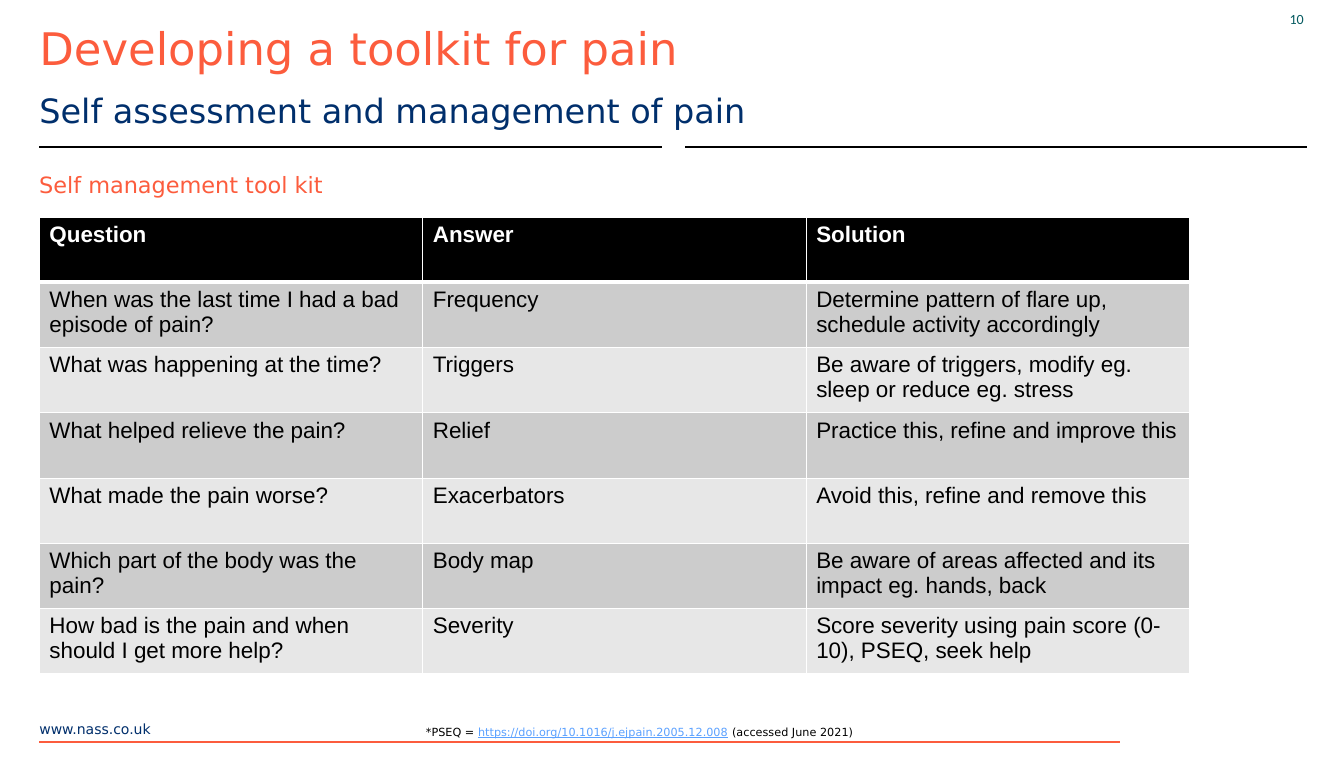
from lxml.etree import SubElement
from pptx import Presentation
from pptx.dml.color import RGBColor
from pptx.enum.shapes import MSO_CONNECTOR
from pptx.enum.text import MSO_ANCHOR, MSO_AUTO_SIZE, PP_ALIGN
from pptx.oxml.ns import qn
from pptx.util import Pt

WHITE = RGBColor(0xFF, 0xFF, 0xFF)
BLACK = RGBColor(0x00, 0x00, 0x00)
CORAL = RGBColor(0xFC, 0x5C, 0x3D)
NAVY = RGBColor(0x00, 0x2F, 0x6C)
TEAL = RGBColor(0x05, 0x5A, 0x60)
LINK_BLUE = RGBColor(0x5B, 0xA1, 0xFF)
DARK_BAND = RGBColor(0xCC, 0xCC, 0xCC)
LIGHT_BAND = RGBColor(0xE7, 0xE7, 0xE7)

MAIN_FONT = "DejaVu Sans"
TABLE_FONT = "Arial"
LEFT = 28.1
ROW_HEIGHT = 46.6
COLUMN_WIDTH = 273.4

TOOLKIT = [
    ("Question", "Answer", "Solution"),
    ("When was the last time I had a bad episode of pain?", "Frequency",
     "Determine pattern of flare up, schedule activity accordingly"),
    ("What was happening at the time?", "Triggers",
     "Be aware of triggers, modify eg. sleep or reduce eg. stress"),
    ("What helped relieve the pain?", "Relief",
     "Practice this, refine and improve this"),
    ("What made the pain worse?", "Exacerbators",
     "Avoid this, refine and remove this"),
    ("Which part of the body was the pain?", "Body map",
     "Be aware of areas affected and its impact eg. hands, back"),
    ("How bad is the pain and when should I get more help?", "Severity",
     "Score severity using pain score (0-10), PSEQ, seek help"),
]


def set_attributes(target, values):
    for name, value in values.items():
        setattr(target, name, value)


def add_span(para, text, size, color, font=MAIN_FONT, **more):
    span = para.add_run()
    span.text = text
    set_attributes(span.font, {"name": font, "size": Pt(size), **more})
    span.font.color.rgb = color


def format_frame(frame, margins, anchor=MSO_ANCHOR.TOP):
    left, top, right, bottom = map(Pt, margins)
    set_attributes(frame, {
        "word_wrap": True, "auto_size": MSO_AUTO_SIZE.NONE,
        "vertical_anchor": anchor, "margin_left": left, "margin_top": top,
        "margin_right": right, "margin_bottom": bottom,
    })


def add_text(page, place, spans, margins=(0, 0, 0, 0),
             anchor=MSO_ANCHOR.TOP, align=PP_ALIGN.LEFT):
    box = page.shapes.add_textbox(*map(Pt, place))
    format_frame(box.text_frame, margins, anchor)
    para = box.text_frame.paragraphs[0]
    para.alignment = align
    for text, format_values in spans:
        add_span(para, text, **format_values)


def add_title(page, text):
    title = page.shapes.title
    set_attributes(title, {"left": Pt(LEFT), "top": Pt(15.8),
                           "width": Pt(901.4), "height": Pt(39.6)})
    title.fill.solid()
    title.fill.fore_color.rgb = WHITE
    format_frame(title.text_frame, (0, 3.6, 0, 3.6))
    para = title.text_frame.paragraphs[0]
    set_attributes(para, {"alignment": PP_ALIGN.LEFT, "line_spacing": 0.9})
    add_span(para, text, 32, CORAL)


def add_rule(page, start, end, y, color, width):
    rule = page.shapes.add_connector(
        MSO_CONNECTOR.STRAIGHT, Pt(start), Pt(y), Pt(end), Pt(y))
    rule.line.color.rgb = color
    rule.line.width = Pt(width)
    SubElement(rule._element.spPr, qn("a:effectLst"))


def add_borders(cell, bottom_widths):
    properties = cell._tc.get_or_add_tcPr()
    widths = {"lnL": 1, "lnR": 1, **bottom_widths}
    for side, width in widths.items():
        border = SubElement(properties, qn(f"a:{side}"), w=str(Pt(width)))
        fill = SubElement(border, qn("a:solidFill"))
        SubElement(fill, qn("a:srgbClr"), val=str(WHITE))


def add_toolkit_table(page, rows):
    columns = len(rows[0])
    table = page.shapes.add_table(
        len(rows), columns, Pt(LEFT), Pt(154.8),
        Pt(COLUMN_WIDTH * columns), Pt(ROW_HEIGHT * len(rows))).table
    for column in table.columns:
        column.width = Pt(COLUMN_WIDTH)
    for index, texts in enumerate(rows):
        table.rows[index].height = Pt(ROW_HEIGHT)
        header = index == 0
        band = BLACK if header else DARK_BAND if index % 2 else LIGHT_BAND
        for cell, text in zip(table.rows[index].cells, texts):
            # The header is set off by a heavier line below it
            add_borders(cell, {"lnT": 3 if index == 1 else 1,
                               "lnB": 3 if header else 1})
            cell.fill.solid()
            cell.fill.fore_color.rgb = band
            add_span(cell.text_frame.paragraphs[0], text, 16,
                     WHITE if header else BLACK, TABLE_FONT, bold=header)


def main():
    deck = Presentation()
    deck.slide_width, deck.slide_height = Pt(958.3), Pt(540)
    page = deck.slides.add_slide(deck.slide_layouts[5])

    # Rules, with a white break in the upper one
    add_rule(page, LEFT, 931.7, 105.1, BLACK, 1.5)
    add_rule(page, 472.3, 488.2, 105.1, WHITE, 4.5)
    add_rule(page, LEFT, 798.5, 529.2, CORAL, 1.5)

    # Headings and page number
    add_title(page, "Developing a toolkit for pain")
    add_text(page, (LEFT, 60.5, 901.4, 32.4),
             [("Self assessment and management of pain",
               {"size": 23.9, "color": NAVY})], (0, 3.6, 7.2, 3.6))
    add_text(page, (20.9, 117.4, 363.6, 28.1),
             [("Self management tool kit", {"size": 16, "color": CORAL})],
             (7.2, 0, 7.2, 0), MSO_ANCHOR.MIDDLE)
    add_text(page, (902.2, -0.4, 27.4, 27.4),
             [("10", {"size": 10, "color": TEAL, "font": "Calibri"})],
             (7.2, 3.6, 0, 3.6), MSO_ANCHOR.MIDDLE, PP_ALIGN.RIGHT)

    # Questions, answers and solutions
    add_toolkit_table(page, TOOLKIT)

    # Footer
    add_text(page, (LEFT, 514.1, 135.4, 11.5),
             [("www.nass.co.uk", {"size": 10, "color": NAVY})])
    note = {"size": 8, "color": BLACK}
    link = {"size": 8, "color": LINK_BLUE, "underline": True}
    add_text(page, (133.2, 508.3, 645.8, 18.7),
             [("*PSEQ = ", note),
              ("https://doi.org/10.1016/j.ejpain.2005.12.008", link),
              (" (accessed June 2021)", note)],
             anchor=MSO_ANCHOR.BOTTOM, align=PP_ALIGN.CENTER)

    deck.save("out.pptx")


if __name__ == "__main__":
    main()
